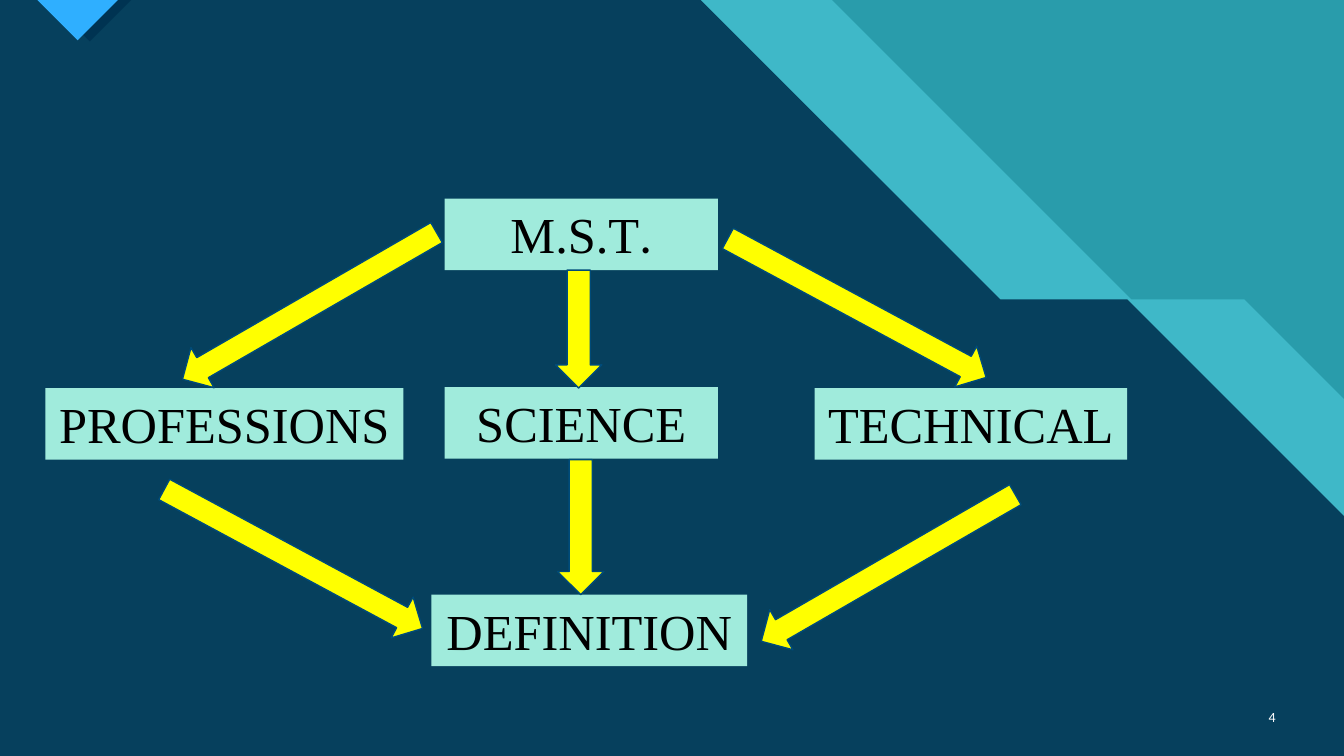
from lxml import etree
from pptx import Presentation
from pptx.dml.color import RGBColor
from pptx.enum.shapes import MSO_SHAPE
from pptx.enum.text import MSO_ANCHOR, PP_ALIGN
from pptx.oxml.ns import qn
from pptx.util import Inches, Pt

RECT, DOWN_ARROW = MSO_SHAPE.RECTANGLE, MSO_SHAPE.DOWN_ARROW
CENTER, RIGHT = PP_ALIGN.CENTER, PP_ALIGN.RIGHT
TOP, MIDDLE = MSO_ANCHOR.TOP, MSO_ANCHOR.MIDDLE
WIDTH, HEIGHT = 13.33, 7.5
SERIF, SANS = "Times New Roman", "Calibri"
COLORS = {
    "background": "47C3D3",
    "teal": "299CAB",
    "light": "47C3D3",
    "navy": "003352",
    "blue": "2FAFFF",
    "box": "A0EBDC",
    "arrow": "FFFF00",
    "outline": "004B79",
    "black": "000000",
    "white": "FFFFFF",
}


class SlideBuilder:
    def __init__(self, slide):
        self.s = slide

    def color(self, name):
        return RGBColor.from_string(COLORS[name])

    def paint(self, fill, name):
        fill.solid()
        fill.fore_color.rgb = self.color(name)

    def finish(self, sp, fill):
        sp.shadow.inherit = False
        self.paint(sp.fill, fill)
        sp.line.fill.background()
        return sp

    def background(self, name):
        self.paint(self.s.background.fill, name)

    def shape(self, kind, x, y, w, h, fill):
        sp = self.s.shapes.add_shape(kind, Inches(x), Inches(y), Inches(w), Inches(h))
        return self.finish(sp, fill)

    def polygon(self, points, fill, opacity=100):
        corners = [(Inches(x), Inches(y)) for x, y in points]
        builder = self.s.shapes.build_freeform(*corners[0])
        builder.add_line_segments(corners[1:], close=True)
        sp = self.finish(builder.convert_to_shape(), fill)
        if opacity < 100:
            clr = sp.element.spPr.find(qn("a:solidFill")).find(qn("a:srgbClr"))
            etree.SubElement(clr, qn("a:alpha")).set("val", str(opacity * 1000))

    def add_text(self, sp, runs, size, color, align, anchor):
        tf = sp.text_frame
        tf.word_wrap = True
        tf.vertical_anchor = anchor
        p = tf.paragraphs[0]
        p.alignment = align
        for text, font in runs:
            r = p.add_run()
            r.text = text
            r.font.name = font
            r.font.size = Pt(size)
            r.font.color.rgb = self.color(color)

    def box(self, x, y, w, runs):
        sp = self.shape(RECT, x, y, w, 0.71, "box")
        self.add_text(sp, runs, 36, "black", CENTER, TOP)

    def arrow(self, x, y, length, rotation=0):
        sp = self.shape(DOWN_ARROW, x, y, 0.46, length, "arrow")
        sp.rotation = rotation
        sp.line.color.rgb = self.color("outline")
        sp.line.width = Pt(1)

    def page_number(self, x, y, w, h, text):
        sp = self.s.shapes.add_textbox(Inches(x), Inches(y), Inches(w), Inches(h))
        self.add_text(sp, [(text, SANS)], 10, "white", RIGHT, MIDDLE)


def main():
    prs = Presentation()
    prs.slide_width, prs.slide_height = Inches(WIDTH), Inches(HEIGHT)
    page = SlideBuilder(prs.slides.add_slide(prs.slide_layouts[6]))

    page.background("background")
    page.shape(RECT, 0, 0, WIDTH, HEIGHT, "teal")
    bands = [
        (8.25, 11.22, 12.34, 3.96, "light", 74),
        (6.95, 9.92, 11.18, 5.12, "navy", 90),
    ]
    for top, step_start, step_end, edge, fill, opacity in bands:
        outline = [(0, 0), (top, 0), (step_start, 2.97), (step_end, 2.97),
                   (WIDTH, edge), (WIDTH, HEIGHT), (0, HEIGHT)]
        page.polygon(outline, fill, opacity)
    for left, depth, fill in [(0.48, 0.41, "navy"), (0.37, 0.4, "blue")]:
        page.polygon([(left, 0), (left + depth, depth), (left + 2 * depth, 0)], fill)

    page.page_number(12.31, 6.91, 0.44, 0.4, "4")

    boxes = [
        (4.41, 1.97, 2.71, [("M.S.T", SERIF), (".", SANS)]),
        (4.41, 3.84, 2.71, [("SCIENCE", SERIF)]),
        (8.08, 3.85, 3.1, [("TECHNICAL", SERIF)]),
        (0.45, 3.85, 3.55, [("PROFESSIONS", SERIF)]),
        (4.28, 5.9, 3.13, [("DEFINITION", SERIF)]),
    ]
    for box in boxes:
        page.box(*box)

    to_left, to_right, slanted = 60, 298.3, 2.91
    arrows = [
        (5.51, 2.68, 1.17),
        (2.84, 1.58, slanted, to_left),
        (8.27, 1.6, slanted, to_right),
        (5.53, 4.56, 1.34),
        (2.68, 4.09, slanted, to_right),
        (8.58, 4.18, slanted, to_left),
    ]
    for arrow in arrows:
        page.arrow(*arrow)

    prs.save("out.pptx")


if __name__ == "__main__":
    main()
